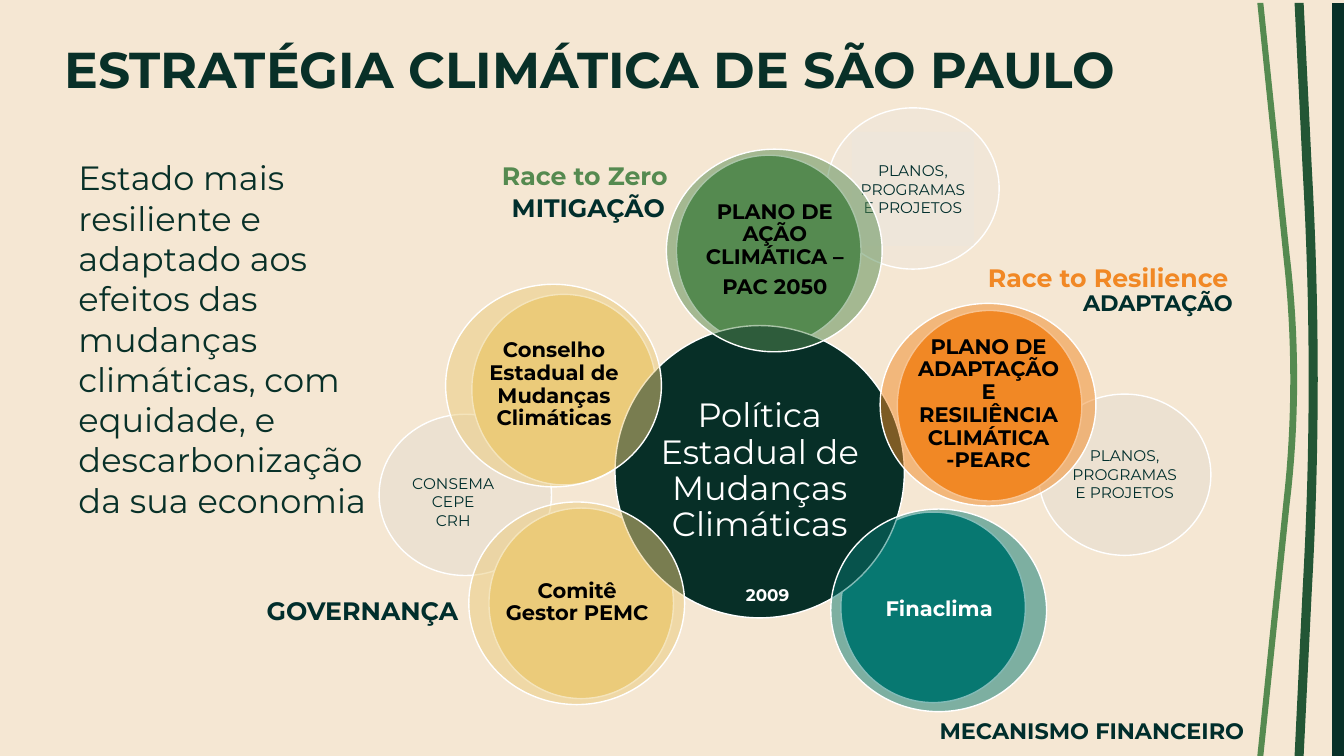
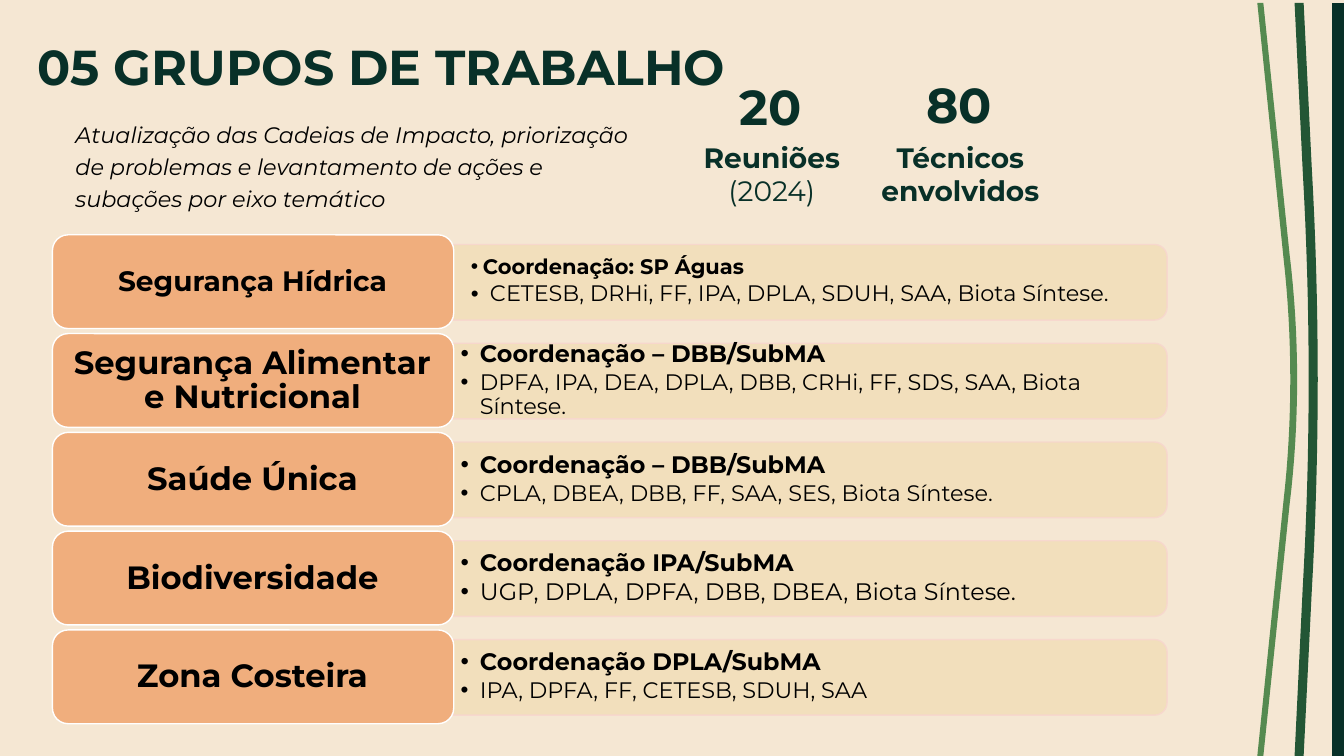
import pptx
import pptx.util
import pptx.dml.color
import pptx.enum.shapes
import pptx.enum.text
import pptx.oxml
import pptx.oxml.ns
import lxml.etree

RGB = pptx.dml.color.RGBColor
SHAPE = pptx.enum.shapes.MSO_SHAPE
ALIGN = pptx.enum.text.PP_ALIGN
ANCHOR = pptx.enum.text.MSO_ANCHOR
Pt = pptx.util.Pt
qn = pptx.oxml.ns.qn

PX = 9144  # 100 px to the inch
FONT = "Montserrat"

SAND = RGB(0xF5, 0xE7, 0xD3)
WHITE = RGB(0xFF, 0xFF, 0xFF)
BLACK = RGB(0x00, 0x00, 0x00)
INK = RGB(0x08, 0x30, 0x28)
NIGHT = RGB(0x07, 0x2F, 0x27)
PINE = RGB(0x00, 0x2E, 0x2C)
FOREST = RGB(0x23, 0x56, 0x35)
GREEN = RGB(0x55, 0x8A, 0x50)
GOLD = RGB(0xEB, 0xCB, 0x7A)
TEAL = RGB(0x07, 0x78, 0x71)
ORANGE = RGB(0xF1, 0x88, 0x25)
COPPER = RGB(0xED, 0x7D, 0x31)
BLUSH = RGB(0xF8, 0xD7, 0xCE)
GREY = RGB(0xD0, 0xCE, 0xCE)
MIST = RGB(0xE7, 0xE6, 0xE6)

# Outlines of the right-hand bands: a pair is a line end,
# a triple of pairs is a curve (two handles and its end)
BANDS = [
    (INK, [(1321, 3), (1333, 3), (1333, 750), (1321, 750)]),
    (FOREST, [(1293, 3), (1284, 3), (1292, 168),
              ((1300, 306), (1300, 447), (1292, 585)),
              (1284, 750), (1293, 750), (1301, 588),
              ((1309, 448), (1309, 305), (1301, 165))]),
    (GREEN, [(1279, 252), (1253, 3), (1247, 3), (1273, 256),
             ((1282, 335), (1282, 418), (1273, 497)),
             (1247, 750), (1253, 750), (1279, 501),
             ((1289, 420), (1289, 333), (1279, 252))]),
]


def curve_points(start, first, second, end, steps=16):
    """Points along a cubic curve, without its start."""
    for step in range(1, steps + 1):
        t = step / steps
        u = 1 - t
        yield tuple(u**3 * a + 3 * u * u * t * b + 3 * u * t * t * c + t**3 * d
                    for a, b, c, d in zip(start, first, second, end))


def set_values(target, values):
    for name, value in values.items():
        setattr(target, name, value)


def set_alpha(solid_parent, percent):
    color = solid_parent.find(qn("a:solidFill")).find(qn("a:srgbClr"))
    alpha = lxml.etree.SubElement(color, qn("a:alpha"))
    alpha.set("val", str(percent * 1000))


class Deck:
    def __init__(self):
        self.file = pptx.Presentation()
        self.file.slide_width = 1333 * PX
        self.file.slide_height = 750 * PX
        self.page = None

    def new_page(self):
        self.page = self.file.slides.add_slide(self.file.slide_layouts[6])
        fill = self.page.background.fill
        fill.solid()
        fill.fore_color.rgb = SAND

    def bands(self):
        for color, outline in BANDS:
            points = []
            for part in outline:
                if isinstance(part[0], tuple):
                    points.extend(curve_points(points[-1], *part))
                else:
                    points.append(part)
            points = [(round(x * PX), round(y * PX)) for x, y in points]
            builder = self.page.shapes.build_freeform(*points[0], scale=1.0)
            builder.add_line_segments(points[1:], close=True)
            self.paint(builder.convert_to_shape(), color, line=None)

    def paint(self, shape, color, alpha=100, line=WHITE, line_alpha=100):
        shape.shadow.inherit = False
        shape.fill.solid()
        shape.fill.fore_color.rgb = color
        if alpha < 100:
            set_alpha(shape.element.spPr, alpha)
        if line is None:
            shape.line.fill.background()
            return
        shape.line.color.rgb = line
        shape.line.width = Pt(1)
        if line_alpha < 100:
            set_alpha(shape.element.spPr.find(qn("a:ln")), line_alpha)

    def shape(self, kind, at, color, **look):
        shape = self.page.shapes.add_shape(kind, *(n * PX for n in at))
        self.paint(shape, color, **look)
        return shape

    def oval(self, at, color, alpha=100):
        self.shape(SHAPE.OVAL, at, color, alpha=alpha)

    def bar(self, at, color, **look):
        """Bar with round right corners: a round-topped shape on its side."""
        x, y, w, h = at
        upright = (x + (w - h) / 2, y + (h - w) / 2, h, w)
        self.shape(SHAPE.ROUND_2_SAME_RECTANGLE, [round(n) for n in upright],
                   color, **look).rotation = 90

    def text(self, at, paras, size, color=PINE, bold=False, italic=False,
             align=ALIGN.LEFT, anchor=ANCHOR.TOP, inset=(10, 5), wrap=True,
             spacing=1.0, after=0, indents=None, bullet=False):
        """A paragraph is a string or a list of (words, font values)."""
        box = self.page.shapes.add_textbox(*(n * PX for n in at))
        side, edge = (n * PX for n in inset)
        frame = box.text_frame
        set_values(frame, dict(word_wrap=wrap, vertical_anchor=anchor,
                               margin_left=side, margin_right=side,
                               margin_top=edge, margin_bottom=edge))
        for index, spans in enumerate(paras):
            para = frame.paragraphs[0] if index == 0 else frame.add_paragraph()
            set_values(para, dict(alignment=align, line_spacing=spacing,
                                  space_after=Pt(after)))
            if indents:
                self.indent(para, indents[index], bullet)
            if isinstance(spans, str):
                spans = [(spans, {})]
            for words, values in spans:
                span = para.add_run()
                span.text = words
                look = dict(name=FONT, size=Pt(size), bold=bold, italic=italic)
                set_values(span.font, {**look, **values})
                span.font.color.rgb = color

    def indent(self, para, width, bullet):
        props = para._p.get_or_add_pPr()
        props.set("marL", str(width * PX))
        props.set("indent", str(-width * PX if bullet else 0))
        if bullet:
            font = lxml.etree.SubElement(props, qn("a:buFont"))
            font.set("typeface", "Arial")
            lxml.etree.SubElement(props, qn("a:buChar")).set("char", "•")

    def title(self, at, spans, size):
        self.text(at, [spans], size, INK, bold=True, anchor=ANCHOR.MIDDLE,
                  spacing=0.9)

    def centred(self, at, paras, size, color, **style):
        self.text(at, paras, size, color, align=ALIGN.CENTER,
                  anchor=ANCHOR.MIDDLE, **style)


def strategy_page(deck):
    deck.new_page()

    # Pale outer circles
    plans = ["PLANOS, PROGRAMAS E PROJETOS"]
    outer = [
        ((376, 411), GREY, (389, 441), ["CONSEMA", "CEPE", "CRH"]),
        ((820, 107), MIST, (845, 131), plans),
        ((1030, 391), GREY, (1055, 414), plans),
    ]
    for corner, color, text_corner, paras in outer:
        deck.oval((*corner, 171, 160), color, alpha=24)
        label_at = (*text_corner, 121, 113)
        if color == MIST:
            deck.shape(SHAPE.RECTANGLE, label_at, MIST, alpha=24, line=None)
        deck.centred(label_at, paras, 11, PINE, inset=(2, 2))

    # Solid inner circles, then the headings
    for x, y, color in [(485, 504, GOLD), (468, 292, GOLD), (834, 508, TEAL),
                        (890, 308, ORANGE), (671, 154, GREEN)]:
        deck.oval((x, y, 183, 189), color)

    deck.title((54, 29, 1150, 85), "ESTRATÉGIA CLIMÁTICA DE SÃO PAULO", 36)
    deck.text((68, 151, 305, 374),
              ["Estado mais resiliente e adaptado aos efeitos das mudanças "
               "climáticas, com equidade, e descarbonização da sua economia"],
              24, INK)
    for at, words, size in [
            ((1043, 282, 211, 37), "ADAPTAÇÃO", 16),
            ((26, 586, 667, 40), "GOVERNANÇA", 18),
            ((844, 707, 478, 37), "MECANISMO FINANCEIRO", 16),
            ((250, 186, 667, 40), "MITIGAÇÃO", 18)]:
        deck.text(at, [words], size, bold=True, align=ALIGN.CENTER)
    deck.text((488, 154, 191, 40), ["Race to Zero"], 18, GREEN, bold=True)
    deck.text((970, 255, 282, 40), ["Race to Resilience"], 18, ORANGE,
              bold=True)
    deck.bands()

    # Central policy and the translucent circles around it
    deck.oval((610, 323, 287, 290), NIGHT)
    deck.centred((652, 365, 203, 205),
                 ["Política Estadual de Mudanças Climáticas"], 24, WHITE,
                 inset=(3, 3), spacing=0.9)
    ring = [
        (661, 148, GREEN, BLACK, ["PLANO DE AÇÃO CLIMÁTICA –", "PAC 2050"]),
        (873, 301, ORANGE, BLACK,
         ["PLANO DE ADAPTAÇÃO E RESILIÊNCIA CLIMÁTICA -PEARC"]),
        (824, 505, TEAL, WHITE, ["Finaclima"]),
        (465, 498, GOLD, BLACK, ["Comitê Gestor PEMC"]),
        (442, 282, GOLD, BLACK, ["Conselho Estadual de Mudanças Climáticas"]),
    ]
    for x, y, color, ink, paras in ring:
        deck.oval((x, y, 214, 201), color, alpha=50)
        deck.centred((x + 32, y + 29, 151, 142), paras, 15, ink, bold=True,
                     inset=(2, 2), spacing=0.9, after=5)
    deck.text((730, 575, 64, 30), ["2009"], 12, WHITE, bold=True)


def groups_page(deck):
    deck.new_page()
    deck.title((27, 17, 1150, 96),
               [("05", {}), (" ", dict(name="Calibri", size=Pt(44))),
                ("GRUPOS DE TRABALHO", {})], 35)
    deck.bands()

    # Key figures
    plain = dict(bold=False)
    figures = [
        ((724, 71, 82, 69), "20", (687, 134, 157, 77),
         ["Reuniões", [("(2024)", plain)]]),
        ((909, 69, 86, 69), "80", (863, 134, 179, 77),
         ["Técnicos", "envolvidos"]),
    ]
    for number_at, number, label_at, label in figures:
        deck.text(number_at, [number], 35, INK, bold=True, wrap=False)
        deck.text(label_at, label, 20, INK, bold=True, wrap=False,
                  align=ALIGN.CENTER)

    # One row per working group: name, name size, lead, lead size,
    # members, members size
    rows = [
        ("Segurança Hídrica", 20, "Coordenação: SP Águas", 15,
         "CETESB, DRHi, FF, IPA, DPLA, SDUH, SAA, Biota Síntese.", 16),
        ("Segurança Alimentar e Nutricional", 23,
         "Coordenação – DBB/SubMA", 17,
         "DPFA, IPA, DEA, DPLA, DBB, CRHi, FF, SDS, SAA, Biota Síntese.", 16),
        ("Saúde Única", 23, "Coordenação – DBB/SubMA", 17,
         "CPLA, DBEA, DBB, FF, SAA, SES, Biota Síntese.", 16),
        ("Biodiversidade", 23, "Coordenação IPA/SubMA", 17,
         "UGP, DPLA, DPFA, DBB, DBEA, Biota Síntese.", 17),
        ("Zona Costeira", 23, "Coordenação DPLA/SubMA", 17,
         "IPA, DPFA, FF, CETESB, SDUH, SAA", 16),
    ]
    for index, (name, name_size, lead, lead_size, members, size) in enumerate(rows):
        top = 233 + 98 * index
        first = index == 0
        deck.bar((450, top + 9, 708, 75), GOLD, alpha=25, line=BLUSH,
                 line_alpha=90)
        deck.text((450, top + 13, 704, 67),
                  [[(lead, dict(bold=True))], members and [(members, dict(size=Pt(size)))]],
                  lead_size, BLACK, anchor=ANCHOR.MIDDLE,
                  inset=(17, 9) if first else (7, 4), spacing=0.9, after=2.4,
                  indents=(12 if first else 19, 19), bullet=True)
        deck.shape(SHAPE.ROUNDED_RECTANGLE, (52, top, 398, 93), COPPER,
                   alpha=53)
        deck.centred((56, top + 5, 389, 84), [name], name_size, BLACK,
                     bold=True, inset=(8, 4) if first else (10, 5),
                     spacing=0.9)

    deck.text((15, 110, 633, 104),
              ["Atualização das Cadeias de Impacto, priorização de problemas e "
               "levantamento de ações e subações por eixo temático"],
              16, BLACK, italic=True, spacing=1.2, after=6, indents=(50,))


def main():
    deck = Deck()
    strategy_page(deck)
    groups_page(deck)
    deck.file.save("out.pptx")


if __name__ == "__main__":
    main()
